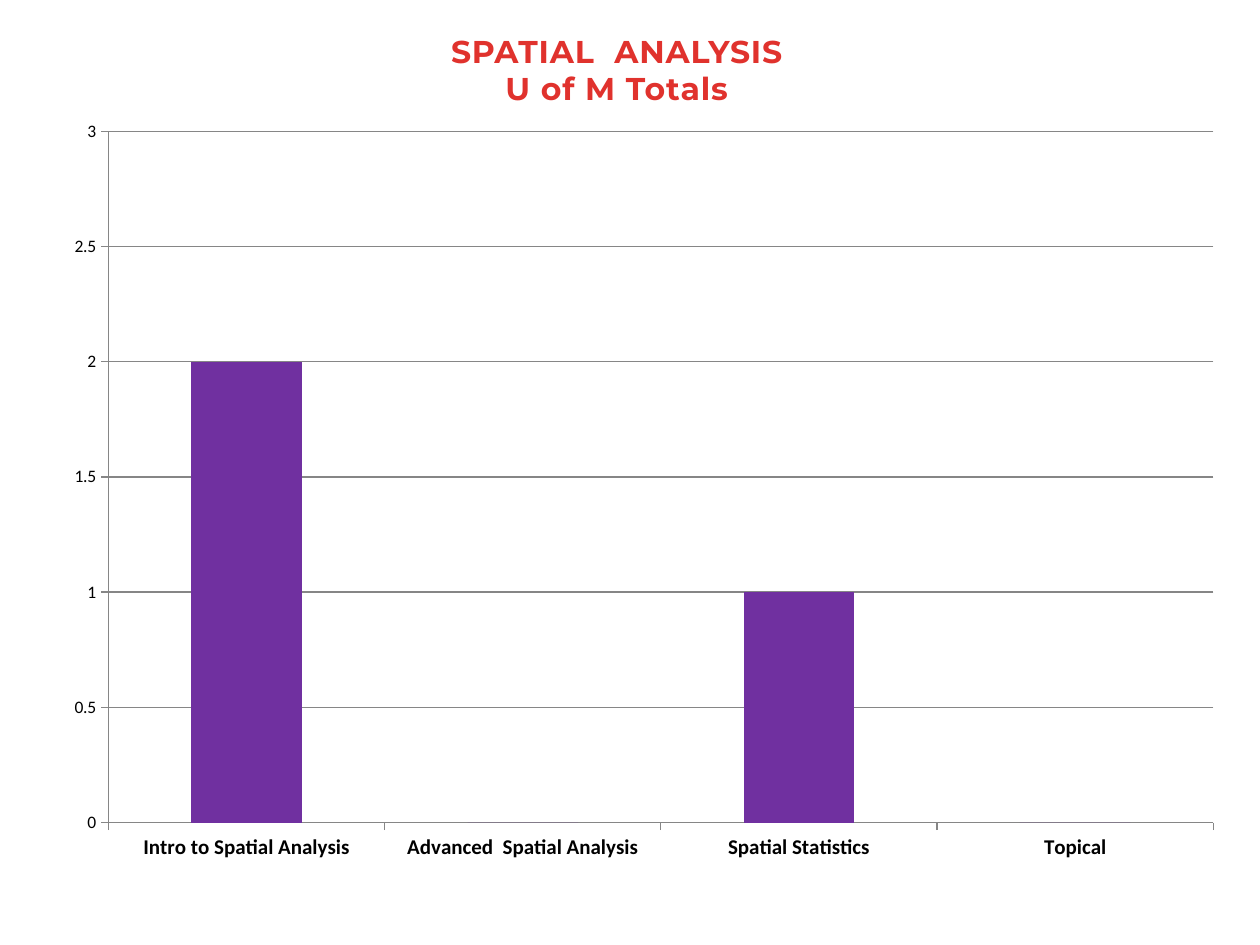
from lxml import etree
from pptx import Presentation
from pptx.chart.data import CategoryChartData
from pptx.dml.color import RGBColor
from pptx.enum import chart as ch, text
from pptx.oxml import ns
from pptx.util import Cm, Pt

COLORS = {"red": "E0322D", "dark_red": "A2201C", "bar": "7030A0",
          "text": "000000", "axis": "868686"}
RGB = {name: RGBColor.from_string(value) for name, value in COLORS.items()}

prs = Presentation()
prs.slide_width, prs.slide_height = Cm(25.4), Cm(19.05)
s = prs.slides.add_slide(prs.slide_layouts[5])

# Title
title = s.shapes.title
title.left, title.top, title.width, title.height = Cm(4.14), Cm(0.51), Cm(16.59), Cm(1.8)
tf = title.text_frame
tf.text = "SPATIAL  ANALYSIS\nU of M Totals"
tf.vertical_anchor = text.MSO_ANCHOR.TOP
tf.auto_size = text.MSO_AUTO_SIZE.SHAPE_TO_FIT_TEXT
for p in tf.paragraphs:
    p.alignment = text.PP_ALIGN.CENTER
    r = p.runs[0]
    for name, value in {"name": "Montserrat", "size": Pt(18), "bold": True}.items():
        setattr(r.font, name, value)
    fill = r.font.fill
    fill.gradient()
    fill.gradient_angle = 270
    for stop, color, position in zip(fill.gradient_stops, ("red", "dark_red"), (0.25, 1)):
        stop.color.rgb = RGB[color]
        stop.position = position
    r._r.get_or_add_rPr().set("spc", "50")

# Column chart
data = CategoryChartData()
data.categories = ["Intro to Spatial Analysis", "Advanced  Spatial Analysis",
                   "Spatial Statistics", "Topical"]
data.add_series("Series 1", (2, 0, 1, 0))
chart = s.shapes.add_chart(ch.XL_CHART_TYPE.COLUMN_CLUSTERED, Cm(0.99), Cm(2.18),
                           Cm(23.95), Cm(15.49), data).chart
chart.has_legend = False
chart.has_title = False
for name, value in {"name": "Calibri", "size": Pt(10)}.items():
    setattr(chart.font, name, value)
chart.font.color.rgb = RGB["text"]

plot = chart.plots[0]
plot.gap_width = 150
plot.vary_by_categories = False
bars = plot.series[0]
bars.format.fill.solid()
bars.format.fill.fore_color.rgb = RGB["bar"]

cat_axis, val_axis = chart.category_axis, chart.value_axis
val_axis.minimum_scale, val_axis.maximum_scale, val_axis.major_unit = 0, 3, 0.5
val_axis.has_major_gridlines = True
for axis in (cat_axis, val_axis):
    axis.major_tick_mark = ch.XL_TICK_MARK.OUTSIDE
for part in (cat_axis, val_axis, val_axis.major_gridlines):
    part.format.line.color.rgb = RGB["axis"]
    part.format.line.width = Pt(0.75)
labels = cat_axis.tick_labels
for name, value in {"name": "Calibri", "size": Pt(12), "bold": True}.items():
    setattr(labels.font, name, value)
labels.font.color.rgb = RGB["text"]

# Fixed plot area, as fractions of the chart
plot_area = chart._chartSpace.chart.plotArea
for old in plot_area.findall(ns.qn("c:layout")):
    plot_area.remove(old)
layout = etree.Element(ns.qn("c:layout"))
manual = etree.SubElement(layout, ns.qn("c:manualLayout"))
for tag, value in {"layoutTarget": "inner", "xMode": "edge", "yMode": "edge",
                   "x": 0.05, "y": 0.03, "w": 0.93, "h": 0.9}.items():
    etree.SubElement(manual, ns.qn(f"c:{tag}")).set("val", str(value))
plot_area.insert(0, layout)

prs.save("out.pptx")
